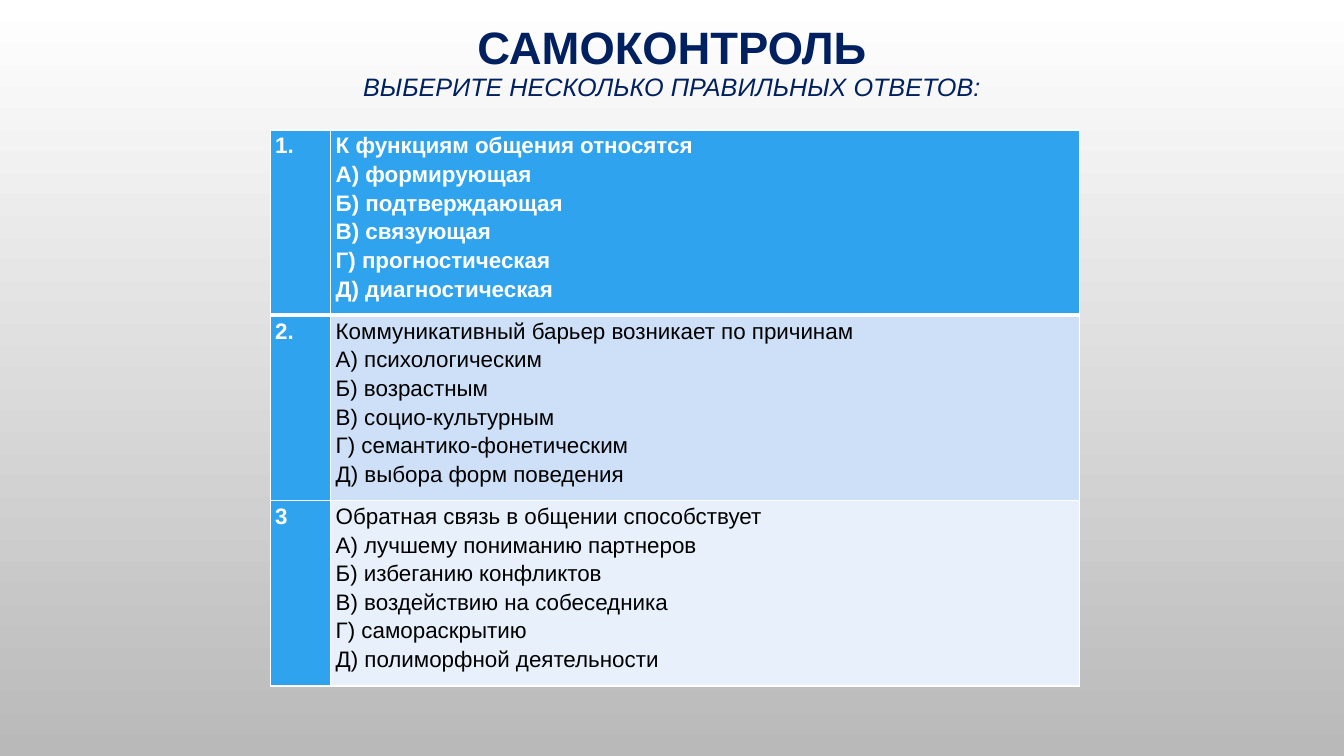
from dataclasses import dataclass

from lxml.etree import SubElement
from pptx import Presentation
from pptx.dml.color import RGBColor
from pptx.enum.text import MSO_ANCHOR as Anchor, PP_ALIGN as Align
from pptx.oxml.ns import qn
from pptx.slide import Slide
from pptx.table import _Cell as Cell
from pptx.util import Inches, Pt


@dataclass(frozen=True)
class Theme:
    font: str = "Arial"
    navy: str = "002060"
    blue: str = "2FA3EE"
    white: str = "FFFFFF"
    black: str = "000000"
    gray: str = "B9B9B9"
    light_blue: str = "CDE0F8"
    pale_blue: str = "E8F0FC"
    title_size: float = 32.4
    subtitle_size: float = 18
    table_size: float = 16


@dataclass(frozen=True)
class Question:
    number: str
    text: str
    answers: tuple[str, ...]
    fill: str
    color: str
    bold: bool
    height: float
    top_line: float = 1
    bottom_line: float = 1


THEME = Theme()
QUESTIONS = (
    Question("1.", "К функциям общения относятся",
             ("формирующая", "подтверждающая", "связующая", "прогностическая", "диагностическая"),
             THEME.blue, THEME.white, True, 1.75, bottom_line=3),
    Question("2.", "Коммуникативный барьер возникает по причинам",
             ("психологическим", "возрастным", "социо-культурным", "семантико-фонетическим",
              "выбора форм поведения"),
             THEME.light_blue, THEME.black, False, 1.7, top_line=3),
    Question("3", "Обратная связь в общении способствует",
             ("лучшему пониманию партнеров", "избеганию конфликтов", "воздействию на собеседника",
              "самораскрытию", "полиморфной деятельности"),
             THEME.pale_blue, THEME.black, False, 1.7),
)
COLUMN_WIDTHS = (0.6, 7.43)


def set_background(slide: Slide) -> None:
    fill = slide.background.fill
    fill.gradient()
    fill.gradient_angle = 270
    for stop, position, color in zip(fill.gradient_stops, (0, 1), (THEME.white, THEME.gray)):
        stop.position = position
        stop.color.rgb = RGBColor.from_string(color)


def add_title(slide: Slide) -> None:
    shape = slide.shapes.add_textbox(Inches(1), Inches(0.2), Inches(11.33), Inches(0.86))
    frame = shape.text_frame
    frame.word_wrap = True
    frame.vertical_anchor = Anchor.MIDDLE
    paragraph = frame.paragraphs[0]
    paragraph.text = "САМОКОНТРОЛЬ\vВЫБЕРИТЕ НЕСКОЛЬКО ПРАВИЛЬНЫХ ОТВЕТОВ:"
    paragraph.alignment = Align.CENTER
    paragraph.line_spacing = 0.9
    title, subtitle = paragraph.runs
    title.font.size, title.font.bold = Pt(THEME.title_size), True
    subtitle.font.size, subtitle.font.italic = Pt(THEME.subtitle_size), True
    for run in paragraph.runs:
        run.font.name = THEME.font
        run.font.color.rgb = RGBColor.from_string(THEME.navy)


def add_borders(cell: Cell, top: float, bottom: float) -> None:
    properties = cell._tc.get_or_add_tcPr()
    for side, width in (("L", 1), ("R", 1), ("T", top), ("B", bottom)):
        line = SubElement(properties, qn(f"a:ln{side}"), w=str(Pt(width)))
        SubElement(SubElement(line, qn("a:solidFill")), qn("a:srgbClr"), val=THEME.white)


def fill_cell(cell: Cell, text: str, fill: str, color: str, bold: bool, align: Align) -> None:
    cell.margin_left = cell.margin_right = Inches(0.05)
    cell.margin_top = cell.margin_bottom = 0
    cell.fill.solid()
    cell.fill.fore_color.rgb = RGBColor.from_string(fill)
    cell.text_frame.text = text
    for paragraph in cell.text_frame.paragraphs:
        paragraph.alignment = align
        paragraph.line_spacing = 1.15
        font = paragraph.runs[0].font
        font.name, font.size, font.bold = THEME.font, Pt(THEME.table_size), bold
        font.color.rgb = RGBColor.from_string(color)


def add_questions(slide: Slide) -> None:
    height = sum(question.height for question in QUESTIONS)
    table = slide.shapes.add_table(
        len(QUESTIONS), len(COLUMN_WIDTHS),
        Inches(2.68), Inches(1.29), Inches(sum(COLUMN_WIDTHS)), Inches(height),
    ).table
    table.horz_banding = False
    for column, width in zip(table.columns, COLUMN_WIDTHS):
        column.width = Inches(width)
    for row, question in zip(table.rows, QUESTIONS):
        row.height = Inches(question.height)
        number_cell, question_cell = row.cells
        for cell in (number_cell, question_cell):
            add_borders(cell, question.top_line, question.bottom_line)
        answers = [f"{letter}) {answer}" for letter, answer in zip("АБВГД", question.answers)]
        fill_cell(number_cell, question.number, THEME.blue, THEME.white, True, Align.JUSTIFY)
        fill_cell(question_cell, "\n".join([question.text, *answers]),
                  question.fill, question.color, question.bold, Align.LEFT)


def main() -> None:
    presentation = Presentation()
    presentation.slide_width = Inches(13.33)
    presentation.slide_height = Inches(7.5)
    slide = presentation.slides.add_slide(presentation.slide_layouts[6])
    set_background(slide)
    add_title(slide)
    add_questions(slide)
    presentation.save("out.pptx")


if __name__ == "__main__":
    main()
